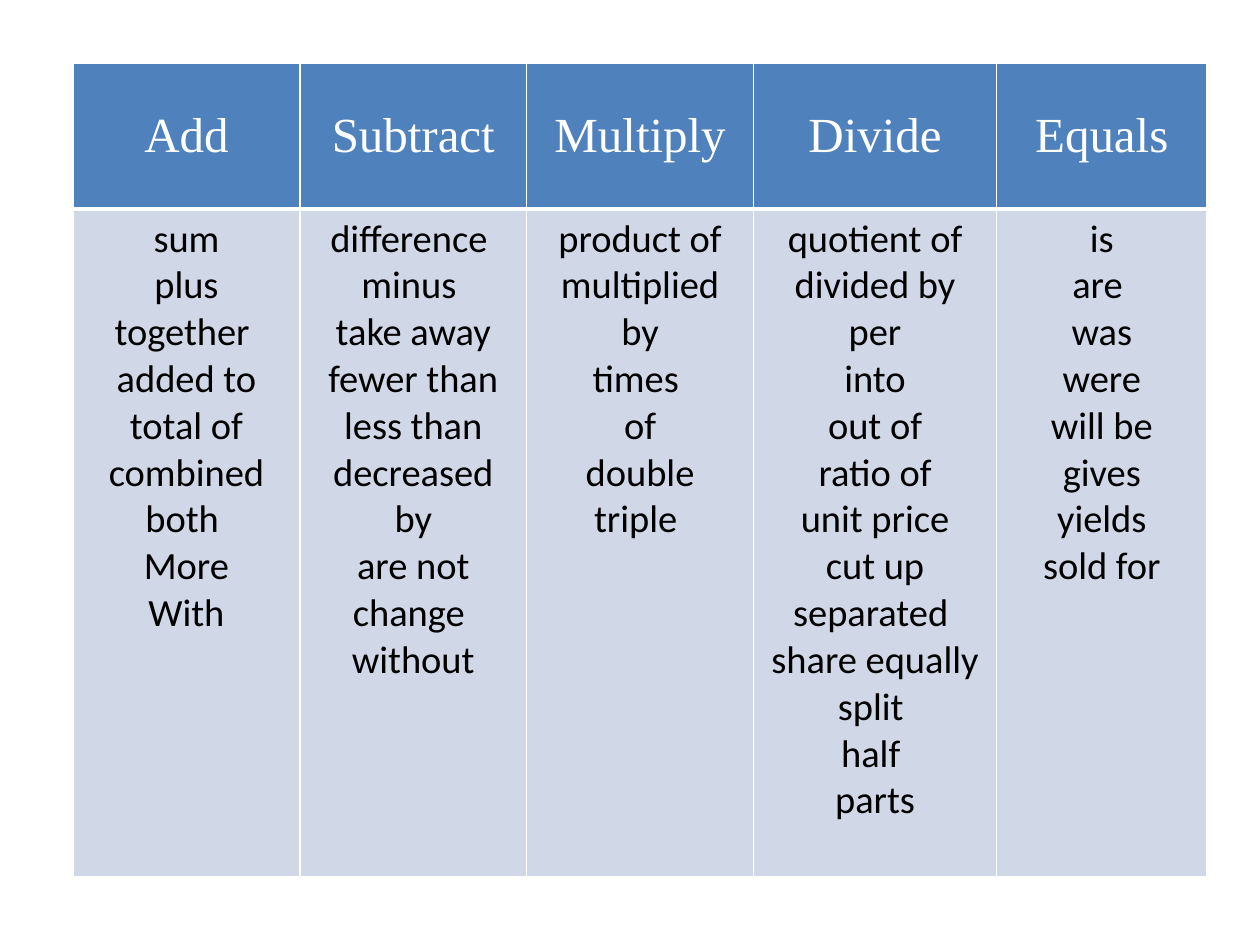
from dataclasses import dataclass

from lxml.etree import SubElement
from pptx import Presentation
from pptx.dml.color import RGBColor
from pptx.enum.text import MSO_ANCHOR, PP_ALIGN
from pptx.oxml.ns import qn
from pptx.util import Inches, Pt


@dataclass
class Operation:
    name: str
    width: float
    phrases: list[str]


@dataclass
class CellStyle:
    font: str
    size: int
    color: str
    fill: str
    anchor: MSO_ANCHOR
    bottom_line: int


HEADER = CellStyle("Times New Roman", 28, "FFFFFF", "4F81BD", MSO_ANCHOR.MIDDLE, 3)
BODY = CellStyle("Calibri", 22, "000000", "D0D8E8", MSO_ANCHOR.TOP, 1)
ROW_HEIGHTS = (1.16, 5.3)

OPERATIONS = [
    Operation("Add", 1.8, ["sum", "plus", "together ", "added to", "total of",
                           "combined", "both ", "More", "With"]),
    Operation("Subtract", 1.8, ["difference ", "minus ", "take away", "fewer than",
                                "less than", "decreased by", "are not", "change ",
                                "without"]),
    Operation("Multiply", 1.8, ["product of", "multiplied by", "times ", "of",
                                "double", "triple "]),
    Operation("Divide", 1.93, ["quotient of", "divided by", "per", "into", "out of",
                               "ratio of", "unit price", "cut up", "separated ",
                               "share equally", "split ", "half ", "parts"]),
    Operation("Equals", 1.67, ["is", "are ", "was", "were", "will be", "gives",
                               "yields", "sold for"]),
]


def rgb(color: str) -> RGBColor:
    return RGBColor.from_string(color)


def set_borders(cell, bottom_line: int) -> None:
    """White lines on all four sides; they must precede the cell fill."""
    tc_pr = cell._tc.get_or_add_tcPr()
    for side in "LRTB":
        width = bottom_line if side == "B" else 1
        ln = SubElement(tc_pr, qn(f"a:ln{side}"), w=str(Pt(width)))
        fill = SubElement(ln, qn("a:solidFill"))
        SubElement(fill, qn("a:srgbClr"), val="FFFFFF")


def fill_cell(cell, lines: list[str], style: CellStyle) -> None:
    set_borders(cell, style.bottom_line)
    cell.fill.solid()
    cell.fill.fore_color.rgb = rgb(style.fill)
    cell.vertical_anchor = style.anchor
    tf = cell.text_frame
    for i, line in enumerate(lines):
        p = tf.add_paragraph() if i else tf.paragraphs[0]
        p.alignment = PP_ALIGN.CENTER
        r = p.add_run()
        r.text = line
        r.font.name = style.font
        r.font.size = Pt(style.size)
        r.font.bold = False
        r.font.color.rgb = rgb(style.color)


def main() -> None:
    prs = Presentation()
    prs.slide_width, prs.slide_height = Inches(10), Inches(7.5)
    s = prs.slides.add_slide(prs.slide_layouts[6])

    # Table of key words, one column per operation
    table = s.shapes.add_table(
        len(ROW_HEIGHTS), len(OPERATIONS), Inches(0.58), Inches(0.5),
        Inches(sum(op.width for op in OPERATIONS)), Inches(sum(ROW_HEIGHTS))).table
    for row, height in zip(table.rows, ROW_HEIGHTS):
        row.height = Inches(height)
    for col, op in enumerate(OPERATIONS):
        table.columns[col].width = Inches(op.width)
        fill_cell(table.cell(0, col), [op.name], HEADER)
        fill_cell(table.cell(1, col), op.phrases, BODY)

    prs.save("out.pptx")


if __name__ == "__main__":
    main()
